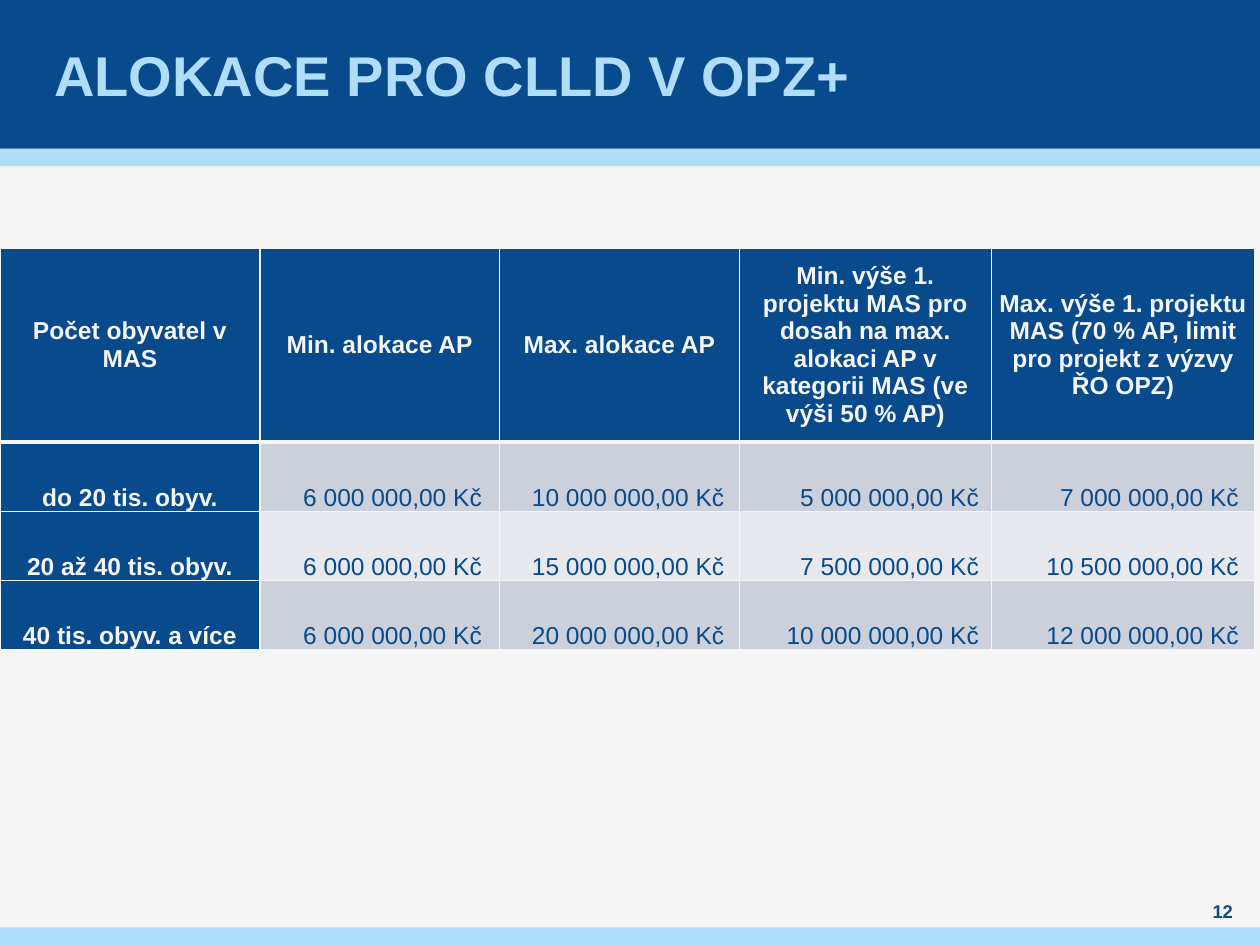
"""Builds the slide on CLLD allocations in OPZ+."""
import pptx
import pptx.dml.color
import pptx.enum.shapes
import pptx.enum.text
import pptx.oxml
import pptx.oxml.ns
import pptx.util

Pt = pptx.util.Pt
ALIGN = pptx.enum.text.PP_ALIGN
ANCHOR = pptx.enum.text.MSO_ANCHOR

TITLE = "ALOKACE PRO CLLD V OPZ+"
PAGE_NUMBER = "12"
HEADINGS = [
    "Počet obyvatel v MAS",
    "Min. alokace AP",
    "Max. alokace AP",
    "Min. výše 1. projektu MAS pro dosah na max. alokaci AP v kategorii MAS (ve výši 50 % AP)",
    "Max. výše 1. projektu MAS (70 % AP, limit pro projekt z výzvy ŘO OPZ)",
]
ALLOCATIONS = [
    ("do 20 tis. obyv.", "6 000 000,00 Kč", "10 000 000,00 Kč", "5 000 000,00 Kč", "7 000 000,00 Kč"),
    ("20 až 40 tis. obyv.", "6 000 000,00 Kč", "15 000 000,00 Kč", "7 500 000,00 Kč", "10 500 000,00 Kč"),
    ("40 tis. obyv. a více", "6 000 000,00 Kč", "20 000 000,00 Kč", "10 000 000,00 Kč", "12 000 000,00 Kč"),
]

THEME = {
    "font": "Arial",
    "navy": "084A8B",
    "sky": "AFDDFA",
    "paper": "F5F5F5",
    "stripes": ("CCD0DA", "E7E9EE"),
    "title_size": 32,
    "table_size": 14,
    "number_size": 10.5,
}

SLIDE_WIDTH, SLIDE_HEIGHT = 720, 540
HEADER_HEIGHT, STRIPE_HEIGHT = 85, 10
BANDS = [
    (HEADER_HEIGHT, STRIPE_HEIGHT, "sky"),
    (0, HEADER_HEIGHT, "navy"),
    (SLIDE_HEIGHT - STRIPE_HEIGHT, STRIPE_HEIGHT, "sky"),
]
TABLE_TOP = 142
COLUMN_WIDTHS = [148.5, 137, 137, 144, 150.5]
ROW_HEIGHTS = [110.5] + [39.7] * len(ALLOCATIONS)
CELL_MARGIN = 3.6
AMOUNT_MARGINS = [10, 8.5, 7, 9]


def rgb(colour):
    return pptx.dml.color.RGBColor.from_string(colour)


def paint(fill, colour):
    fill.solid()
    fill.fore_color.rgb = rgb(colour)


def write(frame, text, size, colour, bold=True, align=ALIGN.LEFT):
    paragraph = frame.paragraphs[0]
    paragraph.alignment = align
    run = paragraph.add_run()
    run.text = text
    run.font.name = THEME["font"]
    run.font.size = Pt(size)
    run.font.bold = bold
    run.font.color.rgb = rgb(colour)


def set_frame(frame, side_margin):
    frame.word_wrap = True
    frame.auto_size = pptx.enum.text.MSO_AUTO_SIZE.NONE
    frame.vertical_anchor = ANCHOR.MIDDLE
    frame.margin_left = frame.margin_right = Pt(side_margin)
    frame.margin_top = frame.margin_bottom = 0


def set_borders(cell, top, bottom):
    properties = cell._tc.get_or_add_tcPr()
    widths = {"lnL": 1, "lnR": 1, "lnT": top, "lnB": bottom}
    for position, (side, width) in enumerate(widths.items()):
        border = pptx.oxml.parse_xml(
            f'<a:{side} {pptx.oxml.ns.nsdecls("a")} w="{Pt(width)}"><a:solidFill>'
            f'<a:srgbClr val="{THEME["paper"]}"/></a:solidFill></a:{side}>'
        )
        properties.insert(position, border)


def add_bands(slide):
    for top, height, colour in BANDS:
        band = slide.shapes.add_shape(
            pptx.enum.shapes.MSO_SHAPE.RECTANGLE, 0, Pt(top), Pt(SLIDE_WIDTH), Pt(height)
        )
        band.shadow.inherit = False
        paint(band.fill, THEME[colour])
        band.line.fill.background()


def add_title(slide):
    title = slide.shapes.title
    title.element.getparent().append(title.element)
    title.left, title.top = Pt(28), 0
    title.width, title.height = Pt(663), Pt(HEADER_HEIGHT)
    set_frame(title.text_frame, 3)
    write(title.text_frame, TITLE, THEME["title_size"], THEME["sky"])


def add_page_number(slide):
    number = slide.shapes.add_textbox(Pt(680.5), Pt(513.5), Pt(36.5), Pt(14.5))
    set_frame(number.text_frame, 0)
    write(number.text_frame, PAGE_NUMBER, THEME["number_size"], THEME["navy"], align=ALIGN.CENTER)


def add_allocations(slide):
    rows = [HEADINGS] + ALLOCATIONS
    table = slide.shapes.add_table(
        len(rows), len(HEADINGS), 0, Pt(TABLE_TOP), Pt(sum(COLUMN_WIDTHS)), Pt(sum(ROW_HEIGHTS))
    ).table
    for column, width in zip(table.columns, COLUMN_WIDTHS):
        column.width = Pt(width)
    for row, height in zip(table.rows, ROW_HEIGHTS):
        row.height = Pt(height)

    for r, texts in enumerate(rows):
        for c, text in enumerate(texts):
            cell = table.cell(r, c)
            is_label = r == 0 or c == 0
            cell.vertical_anchor = ANCHOR.MIDDLE if r == 0 else ANCHOR.BOTTOM
            cell.margin_top = cell.margin_bottom = 0
            cell.margin_left = Pt(CELL_MARGIN)
            cell.margin_right = Pt(CELL_MARGIN if is_label else AMOUNT_MARGINS[c - 1])
            paint(cell.fill, THEME["navy"] if is_label else THEME["stripes"][(r - 1) % 2])
            set_borders(cell, top=3 if r == 1 else 1, bottom=3 if r == 0 else 1)
            write(
                cell.text_frame, text, THEME["table_size"],
                THEME["paper"] if is_label else THEME["navy"],
                bold=is_label, align=ALIGN.CENTER if is_label else ALIGN.RIGHT,
            )


def main():
    deck = pptx.Presentation()
    deck.slide_width, deck.slide_height = Pt(SLIDE_WIDTH), Pt(SLIDE_HEIGHT)
    slide = deck.slides.add_slide(deck.slide_layouts[5])
    paint(slide.background.fill, THEME["paper"])
    add_bands(slide)
    add_title(slide)
    add_page_number(slide)
    add_allocations(slide)
    deck.save("out.pptx")


if __name__ == "__main__":
    main()
